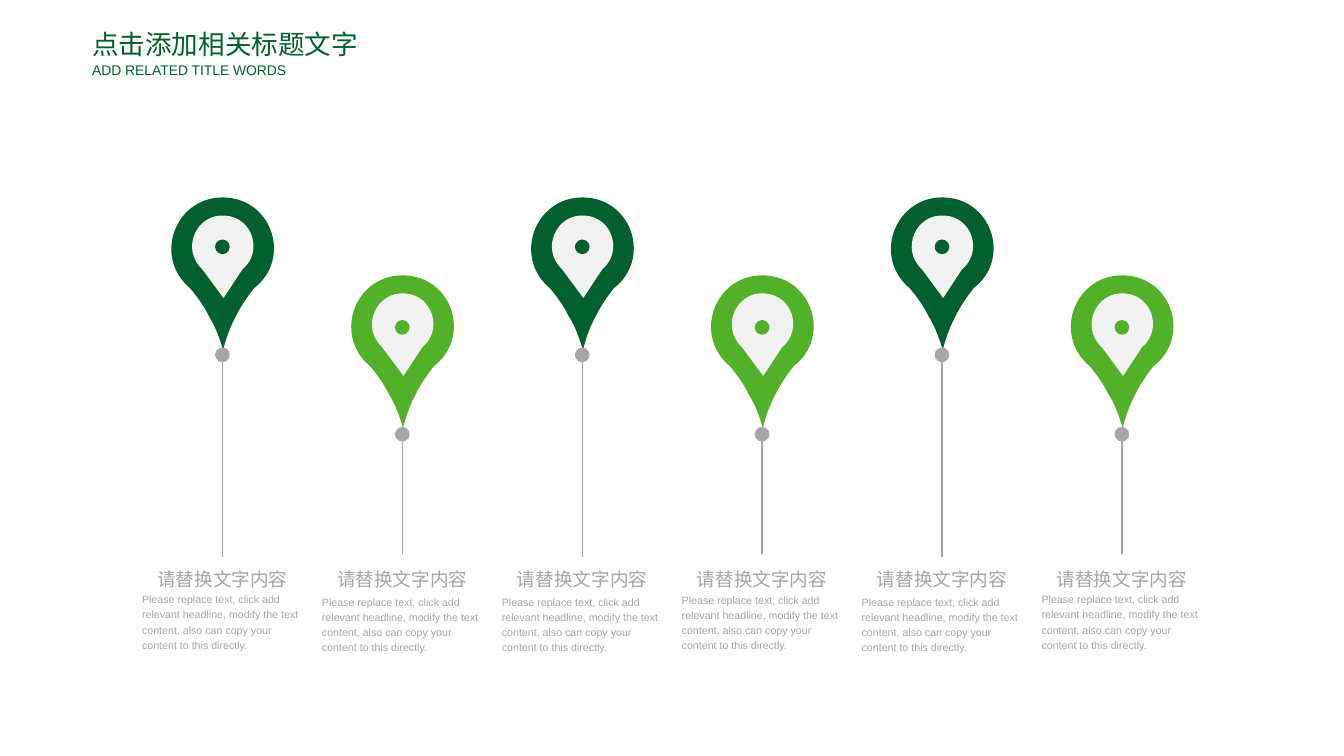
import pptx
import pptx.dml.color
import pptx.enum.shapes
import pptx.enum.text
import pptx.oxml.ns
import pptx.util
from lxml import etree

Cm = pptx.util.Cm
ALIGN = pptx.enum.text.PP_ALIGN
ANCHOR = pptx.enum.text.MSO_ANCHOR

DARK, LIGHT, GREY, PALE = "02602E", "53B129", "A6A6A6", "F2F2F2"

# Pin outlines in cm from the top centre: a box (left, top, width, height),
# a start, then curves (3 points) or lines (1 point)
PIN_BOX = (-1.35, 0, 2.72, 4.06)
PIN = [[(-.86, 2.41)],
       [(-1.88, 1.55), (-1.22, -.08), (.1, 0)],
       [(1.35, .08), (1.83, 1.65), (.84, 2.41)],
       [(.66, 2.64), (.48, 2.9), (.36, 3.15)],
       [(.2, 3.45), (.1, 3.73), (.02, 4.05)],
       [(-.08, 3.73), (-.18, 3.43), (-.36, 3.15)],
       [(-.48, 2.9), (-.66, 2.64), (-.86, 2.41)]]
CENTRE_BOX = (-.82, .48, 1.63, 2.19)
CENTRE = [[(.53, 1.91)],
          [(1.09, 1.45), (.81, .53), (.08, .48)],
          [(-.69, .41), (-1.12, 1.37), (-.53, 1.91)],
          [(.03, 2.67)],
          [(.53, 1.91)]]


def rgb(value):
    return pptx.dml.color.RGBColor.from_string(value)


def write(tf, text, size=12, color=GREY, font="Arial", align=ALIGN.LEFT,
          anchor=ANCHOR.TOP, spacing=1.0, wrap=False):
    tf.margin_left = tf.margin_right = tf.margin_top = tf.margin_bottom = 0
    tf.word_wrap = wrap
    tf.auto_size = pptx.enum.text.MSO_AUTO_SIZE.SHAPE_TO_FIT_TEXT
    tf.vertical_anchor = anchor
    p = tf.paragraphs[0]
    p.alignment, p.line_spacing = align, spacing
    r = p.add_run()
    r.text = text
    r.font.size, r.font.name = pptx.util.Pt(size), font
    r.font.color.rgb = rgb(color)


class Board:
    def __init__(self, prs):
        self.s = prs.slides.add_slide(prs.slide_layouts[5])
        self.shapes = self.s.shapes

    def group(self):
        self.shapes = self.s.shapes.add_group_shape().shapes

    def title(self, x, y, w, h, text, **fmt):
        sp = self.s.shapes.title
        sp.left, sp.top, sp.width, sp.height = Cm(x), Cm(y), Cm(w), Cm(h)
        write(sp.text_frame, text, **fmt)

    def text(self, x, y, w, h, text, **fmt):
        sp = self.shapes.add_textbox(Cm(x), Cm(y), Cm(w), Cm(h))
        write(sp.text_frame, text, **fmt)

    def paint(self, sp, color):
        sp.shadow.inherit = False
        sp.fill.solid()
        sp.fill.fore_color.rgb = rgb(color)
        sp.line.fill.background()

    def outline(self, x, y, box, parts, color):
        left, top, w, h = box
        corners = [(0, 0), (Cm(w), 0), (Cm(w), Cm(h)), (0, Cm(h))]
        fb = self.shapes.build_freeform(*corners[0])
        fb.add_line_segments(corners[1:], close=True)
        sp = fb.convert_to_shape(Cm(x + left), Cm(y + top))
        self.paint(sp, color)

        # Redraw the boxed path with curves
        qn = pptx.oxml.ns.qn
        path = sp._element.spPr.find(".//" + qn("a:path"))
        for child in list(path):
            path.remove(child)
        for i, points in enumerate(parts):
            tag = "a:moveTo" if i == 0 else "a:cubicBezTo" if len(points) == 3 else "a:lnTo"
            step = etree.SubElement(path, qn(tag))
            for px, py in points:
                etree.SubElement(step, qn("a:pt"), x=str(Cm(px - left)), y=str(Cm(py - top)))
        etree.SubElement(path, qn("a:close"))

    def dot(self, x, y, color, d=.39):
        sp = self.shapes.add_shape(pptx.enum.shapes.MSO_SHAPE.OVAL,
                                   Cm(x - d / 2), Cm(y - d / 2), Cm(d), Cm(d))
        self.paint(sp, color)

    def stem(self, x, top, bottom):
        sp = self.shapes.add_connector(pptx.enum.shapes.MSO_CONNECTOR.STRAIGHT,
                                       Cm(x), Cm(bottom), Cm(x), Cm(top))
        sp.line.color.rgb = rgb(GREY)
        sp.line.width = pptx.util.Pt(1)
        etree.SubElement(sp._element.spPr, pptx.oxml.ns.qn("a:effectLst"))


def main():
    prs = pptx.Presentation()
    prs.slide_width, prs.slide_height = Cm(35.71), Cm(20.09)
    board = Board(prs)

    # Heading
    board.title(2.45, .74, 7.11, .86, "点击添加相关标题文字", size=20, color=DARK)
    board.text(2.45, 1.63, 5.28, .46, "ADD RELATED TITLE WORDS", size=10.5, color=DARK)

    # Pins: high dark ones alternate with low light ones
    high = dict(color=DARK, top=5.25, eye=6.56, joint=9.43, stem=9.39, foot=14.8)
    low = dict(color=LIGHT, top=7.32, eye=8.7, joint=11.54, stem=11.71, foot=14.73)
    first, pitch = 5.91, 4.78
    head_width, body_width = 3.48, 4.27
    for i, body_top in enumerate([15.7, 15.77, 15.77, 15.72, 15.77, 15.7]):
        x = first + i * pitch
        pin = low if i % 2 else high
        board.group()
        board.stem(x, pin["stem"], pin["foot"])
        board.outline(x, pin["top"], PIN_BOX, PIN, pin["color"])
        board.outline(x, pin["top"], CENTRE_BOX, CENTRE, PALE)
        board.dot(x, pin["joint"], GREY)

        # Caption under the pin
        board.text(x - head_width / 2, 15.01, head_width, .66, "请替换文字内容", size=14,
                   align=ALIGN.CENTER, anchor=ANCHOR.MIDDLE, spacing=1.2)
        board.text(x - body_width / 2, body_top, body_width, 1.6,
                   "Please replace text, click add relevant headline, modify the text "
                   "content, also can copy your content to this directly.",
                   size=8, anchor=ANCHOR.MIDDLE, spacing=1.2, wrap=True)
        board.dot(x, pin["eye"], pin["color"])

    prs.save("out.pptx")


if __name__ == "__main__":
    main()
